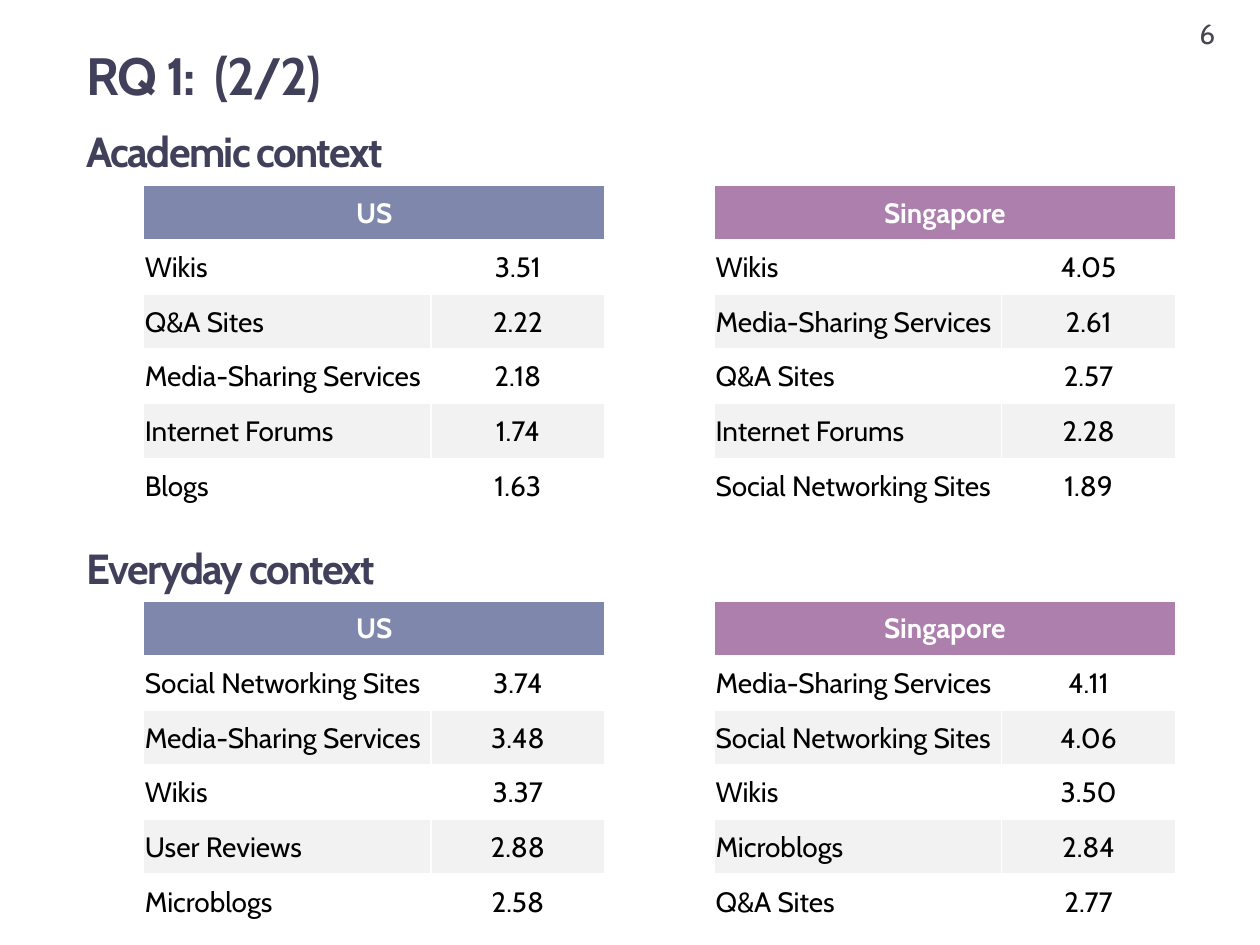
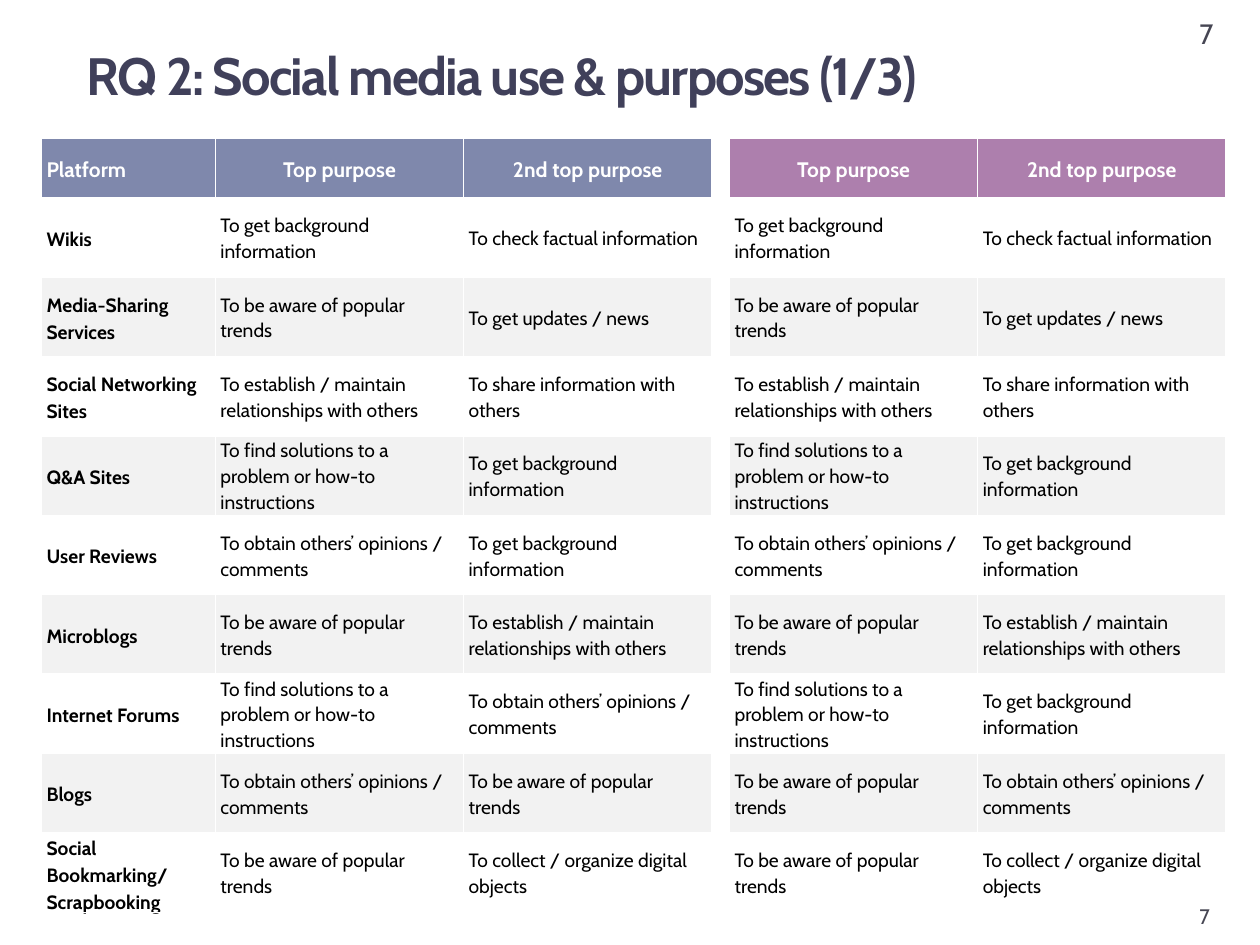
from lxml.etree import SubElement
from pptx import Presentation
from pptx.dml.color import RGBColor
from pptx.enum.text import MSO_ANCHOR, PP_ALIGN
from pptx.oxml import parse_xml
from pptx.oxml.ns import nsdecls, qn
from pptx.util import Inches, Pt

FONT = "Cabin"
COLORS = {
    "heading": "40405A", "number": "464653", "body": "000000",
    "white": "FFFFFF", "band": "F2F2F2", "us": "727CA3", "singapore": "5C005C",
}
OPACITY = {"us": 90, "singapore": 50}
SLIDE_WIDTH, SLIDE_HEIGHT = Inches(10), Inches(7.5)
HEADING_LEFT = 5.9
NUMBER_LEFT = 94.2

# Ranking tables: name, value, gap, name, value
RANKING_COLUMNS = [22.8, 13.8, 8.7, 22.8, 13.8]
RANKING_ROWS = [5.78] * 6
RANKING_INSETS = (0.01, 0.01, 0.01, 0)

# Purpose tables
PLATFORM_COLUMN, PURPOSE_COLUMN = 13.8, 19.7
PURPOSE_ROWS = [6.27] + [8.4] * 9
PURPOSE_INSETS = (0.04, 0, 0.04, 0)

ACADEMIC = [
    ("Wikis", "3.51", "Wikis", "4.05"),
    ("Q&A Sites", "2.22", "Media-Sharing Services", "2.61"),
    ("Media-Sharing Services", "2.18", "Q&A Sites", "2.57"),
    ("Internet Forums", "1.74", "Internet Forums", "2.28"),
    ("Blogs", "1.63", "Social Networking Sites", "1.89"),
]
EVERYDAY = [
    ("Social Networking Sites", "3.74", "Media-Sharing Services", "4.11"),
    ("Media-Sharing Services", "3.48", "Social Networking Sites", "4.06"),
    ("Wikis", "3.37", "Wikis", "3.50"),
    ("User Reviews", "2.88", "Microblogs", "2.84"),
    ("Microblogs", "2.58", "Q&A Sites", "2.77"),
]

BACKGROUND = "To get background information"
FACTS = "To check factual information"
TRENDS = "To be aware of popular trends"
NEWS = "To get updates / news"
RELATIONSHIPS = "To establish / maintain relationships with others"
SHARING = "To share information with others"
SOLUTIONS = "To find solutions to a problem or how-to instructions"
OPINIONS = "To obtain others’ opinions / comments"
COLLECTING = "To collect / organize digital objects"

PURPOSE_HEADERS = ["Top purpose", "2nd top purpose"]
# Platform, two purposes in the US, two purposes in Singapore
PURPOSES = [
    ("Wikis", BACKGROUND, FACTS, BACKGROUND, FACTS),
    ("Media-Sharing Services", TRENDS, NEWS, TRENDS, NEWS),
    ("Social Networking Sites", RELATIONSHIPS, SHARING, RELATIONSHIPS, SHARING),
    ("Q&A Sites", SOLUTIONS, BACKGROUND, SOLUTIONS, BACKGROUND),
    ("User Reviews", OPINIONS, BACKGROUND, OPINIONS, BACKGROUND),
    ("Microblogs", TRENDS, RELATIONSHIPS, TRENDS, RELATIONSHIPS),
    ("Internet Forums", SOLUTIONS, OPINIONS, SOLUTIONS, BACKGROUND),
    ("Blogs", OPINIONS, TRENDS, TRENDS, OPINIONS),
    ("Social Bookmarking/ Scrapbooking", TRENDS, COLLECTING, TRENDS, COLLECTING),
]


def across(percent):
    return round(SLIDE_WIDTH * percent / 100)


def down(percent):
    return round(SLIDE_HEIGHT * percent / 100)


def style_paragraph(paragraph, size, color, bold=False):
    font = paragraph.font
    font.name, font.size, font.bold = FONT, Pt(size), bold
    font.color.rgb = RGBColor.from_string(COLORS[color])


def add_text(slide, text, left, top, width, height, size, color, bold=False):
    frame = slide.shapes.add_textbox(
        across(left), down(top), across(width), down(height)).text_frame
    frame.word_wrap = True
    paragraph = frame.paragraphs[0]
    paragraph.text = text
    style_paragraph(paragraph, size, color, bold)
    return frame


def add_heading(slide, text, top, size, width=87.4):
    frame = add_text(slide, text, HEADING_LEFT, top, width, 8.4, size, "heading", True)
    for run in frame.paragraphs[0].runs:
        run._r.get_or_add_rPr().set("spc", "-100")


def add_title(slide, text):
    add_heading(slide, text, 3.87, 30, 89.8)


def add_page_number(slide, number, top=0.67, size=16):
    frame = add_text(slide, str(number), NUMBER_LEFT, top, 5, 5.33, size, "number")
    frame.vertical_anchor = MSO_ANCHOR.BOTTOM


def fill_cell(cell, color):
    cell.fill.solid()
    cell.fill.fore_color.rgb = RGBColor.from_string(COLORS[color])
    if color in OPACITY:
        color_element = cell._tc.tcPr.find(qn("a:solidFill"))[0]
        SubElement(color_element, qn("a:alpha"), val=str(OPACITY[color] * 1000))


def add_cell_borders(cell):
    properties = cell._tc.get_or_add_tcPr()
    for position, side in enumerate(("lnL", "lnR", "lnT", "lnB")):
        properties.insert(position, parse_xml(
            f'<a:{side} {nsdecls("a")} w="12700"><a:solidFill>'
            f'<a:srgbClr val="{COLORS["white"]}"/></a:solidFill></a:{side}>'))


def add_table(slide, left, top, columns, rows, insets):
    """Add an empty table with white borders and no fill."""
    table = slide.shapes.add_table(
        len(rows), len(columns), across(left), down(top),
        across(sum(columns)), down(sum(rows))).table
    table.first_row = table.horz_banding = False
    for column, width in zip(table.columns, columns):
        column.width = across(width)
    for row, height in zip(table.rows, rows):
        row.height = down(height)
    for cell in table.iter_cells():
        cell.margin_left, cell.margin_top, cell.margin_right, cell.margin_bottom = (
            Inches(inset) for inset in insets)
        cell.vertical_anchor = MSO_ANCHOR.MIDDLE
        cell.fill.background()
        add_cell_borders(cell)
    return table


def write_cell(cell, text, size, color="body", bold=False, centred=False,
               fill=None, line_spacing=None):
    paragraph = cell.text_frame.paragraphs[0]
    paragraph.text = text
    style_paragraph(paragraph, size, color, bold)
    paragraph.alignment = PP_ALIGN.CENTER if centred else PP_ALIGN.LEFT
    if line_spacing:
        paragraph.line_spacing = line_spacing
    if fill:
        fill_cell(cell, fill)


def add_ranking(slide, heading, heading_top, table_top, rankings):
    table = add_table(slide, 11.4, table_top, RANKING_COLUMNS, RANKING_ROWS,
                      RANKING_INSETS)
    for column, country, fill in ((0, "US", "us"), (3, "Singapore", "singapore")):
        header = table.cell(0, column)
        header.merge(table.cell(0, column + 1))
        write_cell(header, country, 16, "white", True, True, fill)
    for row, ranking in enumerate(rankings, start=1):
        fill = "band" if row % 2 == 0 else None
        for column, text in zip((0, 1, 3, 4), ranking):
            write_cell(table.cell(row, column), text, 16,
                       centred=column in (1, 4), fill=fill)
    add_heading(slide, heading, heading_top, 24)


def add_purposes(slide, left, columns, headers, rows, country):
    table = add_table(slide, left, 14.67, columns, PURPOSE_ROWS, PURPOSE_INSETS)
    for column, text in enumerate(headers):
        write_cell(table.cell(0, column), text, 12, "white", True,
                   text != "Platform", country, 1.15)
    for row, texts in enumerate(rows, start=1):
        fill = "white" if row % 2 else "band"
        for column, text in enumerate(texts):
            is_platform = headers[column] == "Platform"
            write_cell(table.cell(row, column), text, 11, bold=is_platform,
                       fill=fill, line_spacing=1.15 if is_platform else 1.1)


def build_rankings_slide(slide):
    add_page_number(slide, 6)
    add_ranking(slide, "Academic context", 12.67, 19.6, ACADEMIC)
    add_ranking(slide, "Everyday context", 56.8, 63.6, EVERYDAY)
    add_title(slide, "RQ 1:  (2/2)")


def build_purposes_slide(slide):
    add_page_number(slide, 7)
    add_purposes(slide, 3.3, [PLATFORM_COLUMN] + [PURPOSE_COLUMN] * 2,
                 ["Platform"] + PURPOSE_HEADERS,
                 [row[:3] for row in PURPOSES], "us")
    add_purposes(slide, 57.9, [PURPOSE_COLUMN] * 2, PURPOSE_HEADERS,
                 [row[3:] for row in PURPOSES], "singapore")
    add_title(slide, "RQ 2: Social media use & purposes (1/3)")
    add_page_number(slide, 7, top=93.6, size=12)


def main():
    presentation = Presentation()
    presentation.slide_width, presentation.slide_height = SLIDE_WIDTH, SLIDE_HEIGHT
    blank_layout = presentation.slide_layouts[6]
    for build_slide in (build_rankings_slide, build_purposes_slide):
        build_slide(presentation.slides.add_slide(blank_layout))
    presentation.save("out.pptx")


if __name__ == "__main__":
    main()
